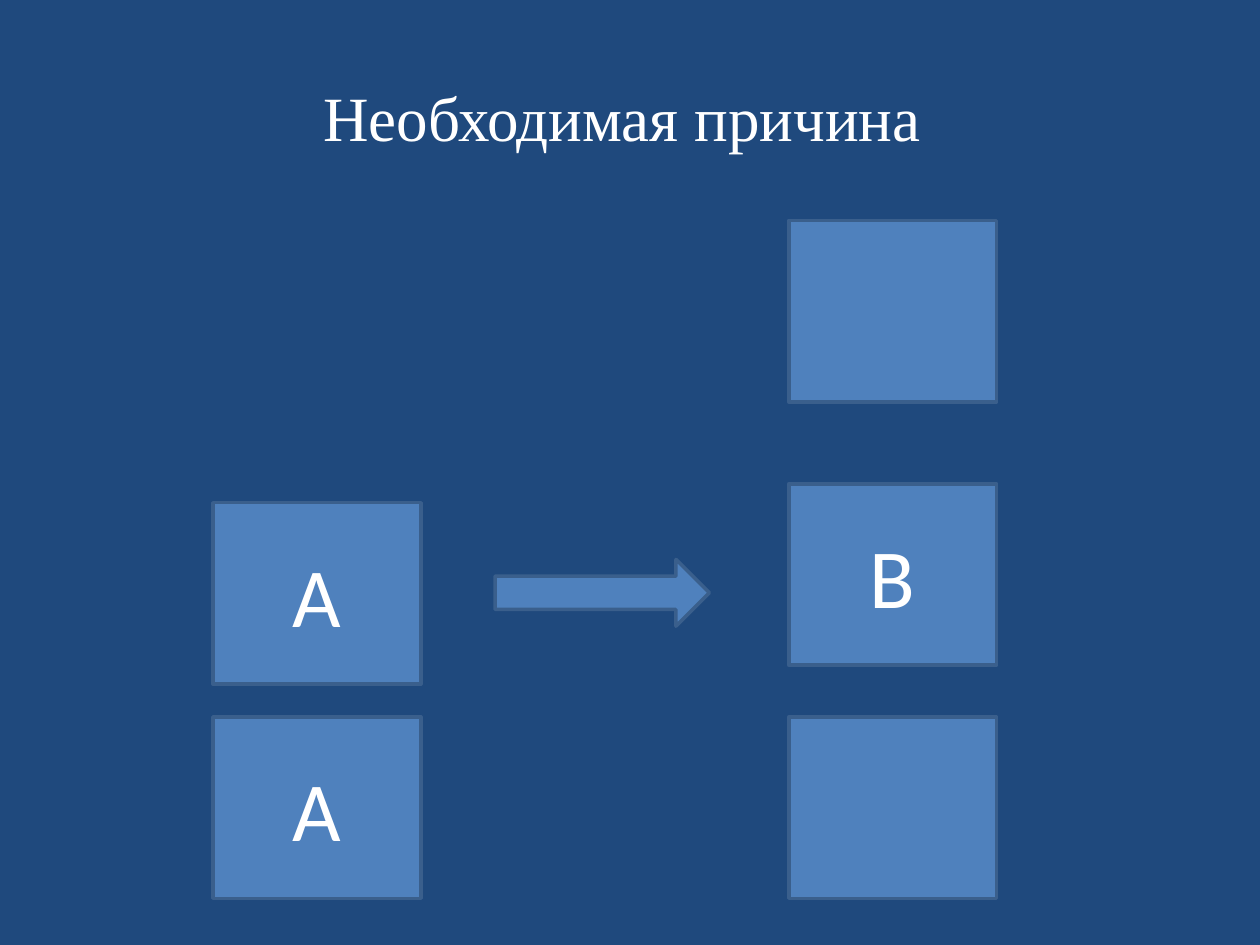
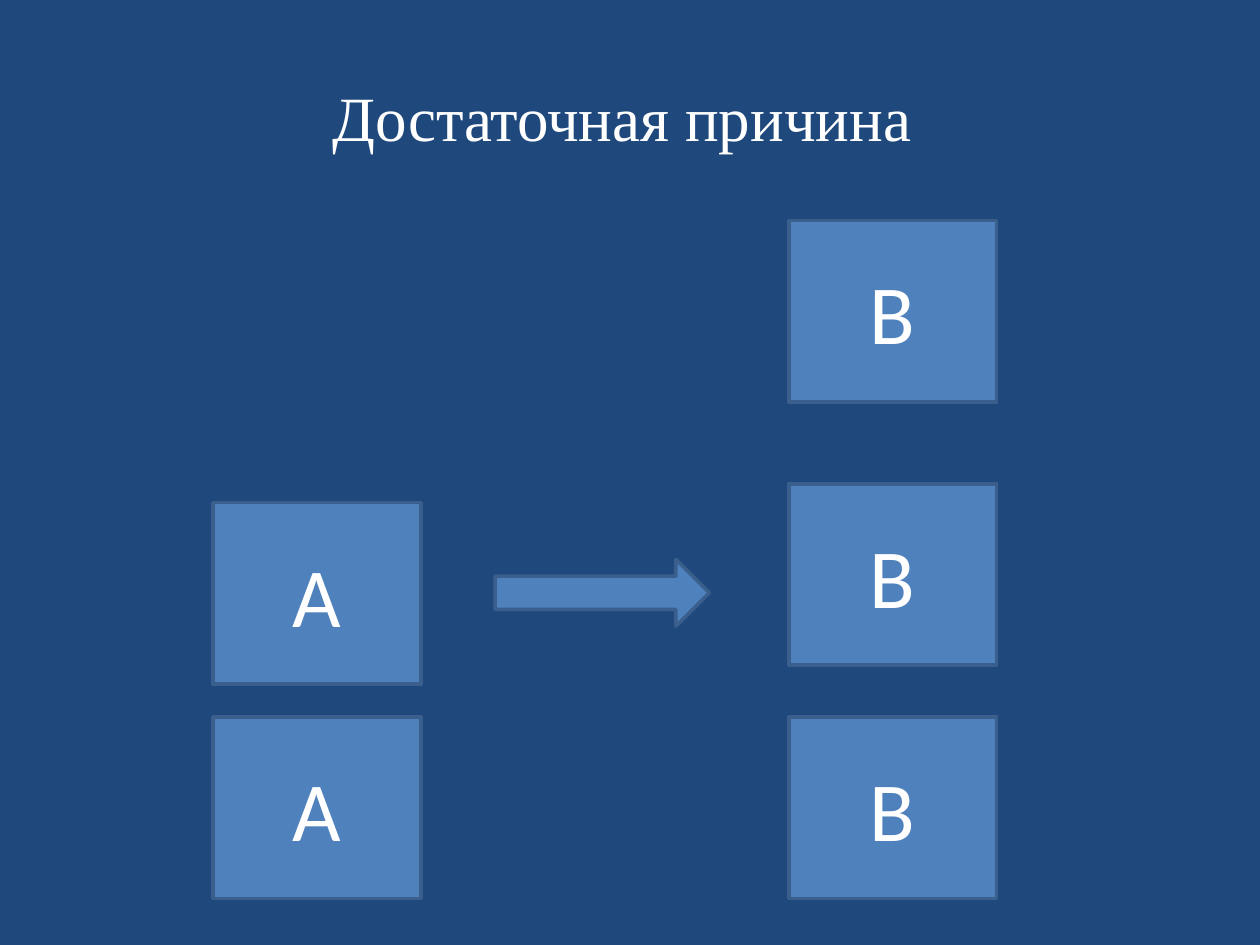
"""Two slides on necessary and sufficient causes, each linking causes to effects."""
import pptx
import pptx.dml.color
import pptx.enum.shapes
import pptx.enum.text
import pptx.util
from pptx.dml.color import RGBColor
from pptx.util import Inches

NAVY = RGBColor(0x1F, 0x49, 0x7D)
BLUE = RGBColor(0x4F, 0x81, 0xBD)
EDGE = RGBColor(0x3A, 0x5F, 0x8C)
WHITE = RGBColor(0xFF, 0xFF, 0xFF)

TITLE_FONT = {"name": "Times New Roman", "size": pptx.util.Pt(36)}
LETTER_FONT = {"name": "Calibri", "size": pptx.util.Pt(48)}
RECTANGLE = pptx.enum.shapes.MSO_SHAPE.RECTANGLE
ARROW = pptx.enum.shapes.MSO_SHAPE.RIGHT_ARROW

BOX_WIDTH, BOX_HEIGHT = 1.65, 1.44
CAUSE_LEFT, EFFECT_LEFT = 1.69, 6.26
CAUSE_TOPS = (5.69, 3.99)
EFFECT_TOPS = (5.69, 3.84, 1.75)

SLIDES = [
    ("Необходимая причина ", ("", "В", "")),
    ("Достаточная причина ", ("В", "В", "В")),
]


def write_text(shape, text, font_format):
    frame = shape.text_frame
    frame.word_wrap = True
    frame.vertical_anchor = pptx.enum.text.MSO_ANCHOR.MIDDLE
    para = frame.paragraphs[0]
    para.alignment = pptx.enum.text.PP_ALIGN.CENTER
    span = para.add_run()
    span.text = text
    for name, value in font_format.items():
        setattr(span.font, name, value)
    span.font.color.rgb = WHITE


def add_block(page, kind, left, top, width, height):
    block = page.shapes.add_shape(
        kind, Inches(left), Inches(top), Inches(width), Inches(height))
    block.shadow.inherit = False
    block.fill.solid()
    block.fill.fore_color.rgb = BLUE
    block.line.color.rgb = EDGE
    block.line.width = pptx.util.Pt(2)
    return block


deck = pptx.Presentation()
deck.slide_width = Inches(10)
deck.slide_height = Inches(7.5)

for title, effects in SLIDES:
    page = deck.slides.add_slide(deck.slide_layouts[6])
    page.background.fill.solid()
    page.background.fill.fore_color.rgb = NAVY

    heading = page.shapes.add_textbox(Inches(0.5), Inches(0.3), Inches(9), Inches(1.25))
    write_text(heading, title, TITLE_FONT)

    add_block(page, ARROW, 3.93, 4.44, 1.7, 0.53)

    columns = [
        (EFFECT_LEFT, EFFECT_TOPS, effects),
        (CAUSE_LEFT, CAUSE_TOPS, ("А", "А")),
    ]
    for left, tops, letters in columns:
        for top, letter in zip(tops, letters):
            box = add_block(page, RECTANGLE, left, top, BOX_WIDTH, BOX_HEIGHT)
            if letter:
                write_text(box, letter, LETTER_FONT)

deck.save("out.pptx")
